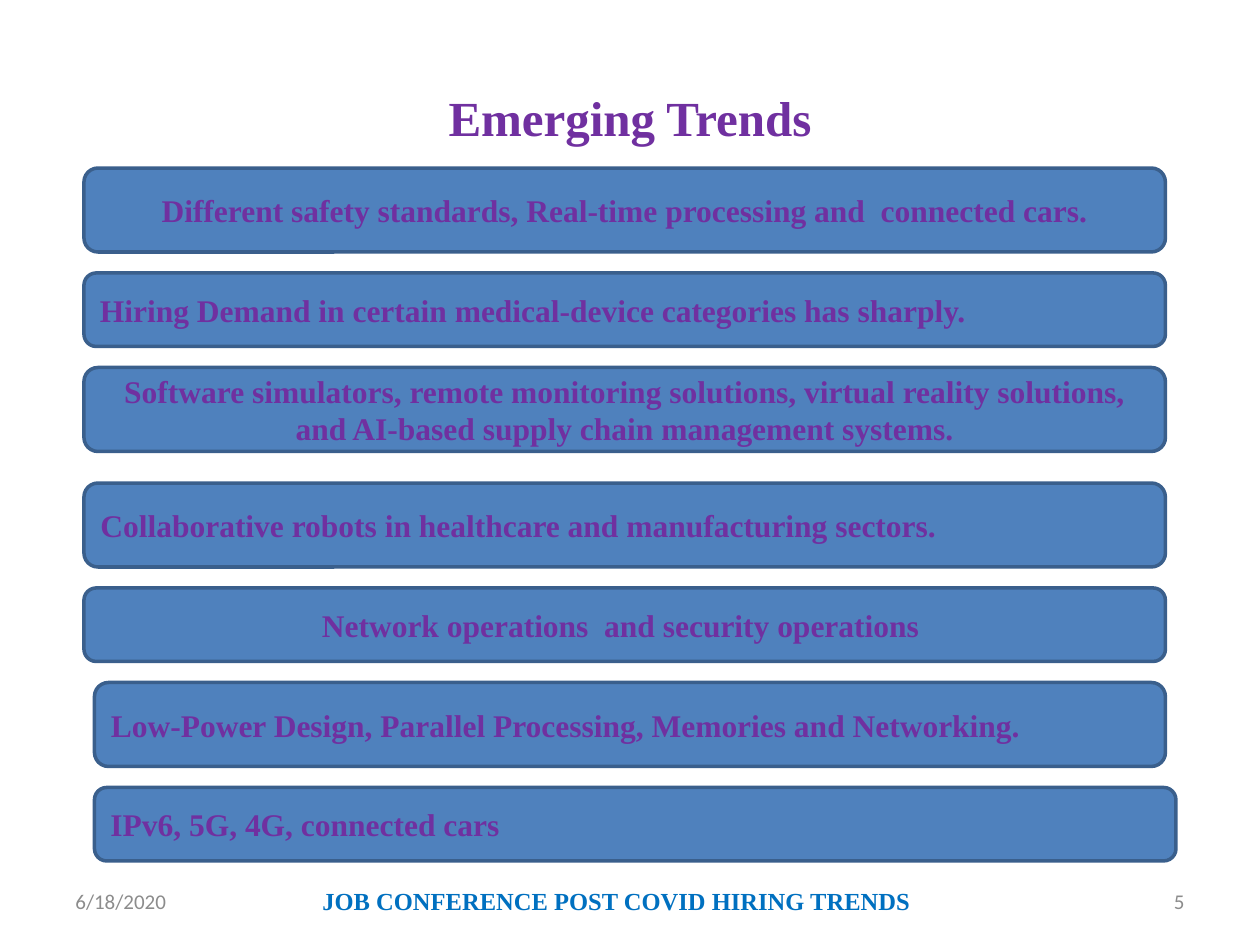
from pptx import Presentation
from pptx import util as u
from pptx.dml import color
from pptx.enum import shapes, text

PX = 7620  # 120 px to the inch
SERIF = "Times New Roman"
PURPLE = "7030A0"
LEFT, CENTER = text.PP_ALIGN.LEFT, text.PP_ALIGN.CENTER
RIGHT, JUSTIFY = text.PP_ALIGN.RIGHT, text.PP_ALIGN.JUSTIFY


def rgb(value):
    return color.RGBColor.from_string(value)


def write(sp, words, align, size, font, hex_color, bold):
    tf = sp.text_frame
    tf.word_wrap = True
    tf.vertical_anchor = text.MSO_ANCHOR.MIDDLE
    tf.text = words
    p = tf.paragraphs[0]
    p.alignment = align
    r = p.runs[0]
    r.font.size = u.Pt(size)
    r.font.name = font
    r.font.bold = bold
    r.font.color.rgb = rgb(hex_color)


prs = Presentation()
prs.slide_width, prs.slide_height = 1200 * PX, 900 * PX
s = prs.slides.add_slide(prs.slide_layouts[5])

# Title
title = s.shapes.title
title.left, title.top = 60 * PX, 36 * PX
title.width, title.height = 1080 * PX, 150 * PX
write(title, "Emerging Trends", CENTER, 28, SERIF, PURPLE, True)

# Trend bars, stacked downwards: left, width, height, gap below, alignment, words
trends = [
    (80, 1030, 80, 20, CENTER,
     "Different safety standards, Real-time processing and  connected cars."),
    (80, 1030, 70, 20, JUSTIFY,
     "Hiring Demand in certain medical-device categories has sharply."),
    (80, 1030, 80, 30, CENTER,
     "Software simulators, remote monitoring solutions, virtual reality "
     "solutions, and AI-based supply chain management systems."),
    (80, 1030, 80, 20, LEFT,
     "Collaborative robots in healthcare and manufacturing sectors."),
    (80, 1030, 70, 20, CENTER,
     "Network operations  and security operations "),
    (90, 1020, 80, 20, JUSTIFY,
     "Low-Power Design, Parallel Processing, Memories and Networking. "),
    (90, 1030, 70, 0, JUSTIFY, "IPv6, 5G, 4G, connected cars"),
]
top = 160
for left, width, height, gap, align, words in trends:
    bar = s.shapes.add_shape(shapes.MSO_SHAPE.ROUNDED_RECTANGLE,
                             left * PX, top * PX, width * PX, height * PX)
    bar.shadow.inherit = False
    bar.fill.solid()
    bar.fill.fore_color.rgb = rgb("4F81BD")
    bar.line.color.rgb = rgb("3A5F8C")
    bar.line.width = u.Pt(2)
    write(bar, words, align, 18, SERIF, PURPLE, True)
    top += height + gap

# Footer: date, slide number, conference name
footer = [
    (60, 280, "6/18/2020", LEFT, 12, "Calibri", "8C8C8C", False),
    (860, 280, "5", RIGHT, 12, "Calibri", "8C8C8C", False),
    (290, 600, "JOB CONFERENCE POST COVID HIRING TRENDS ",
     CENTER, 14, SERIF, "0070C0", True),
]
for left, width, *style in footer:
    box = s.shapes.add_textbox(left * PX, 834 * PX, width * PX, 48 * PX)
    write(box, *style)

prs.save("out.pptx")
